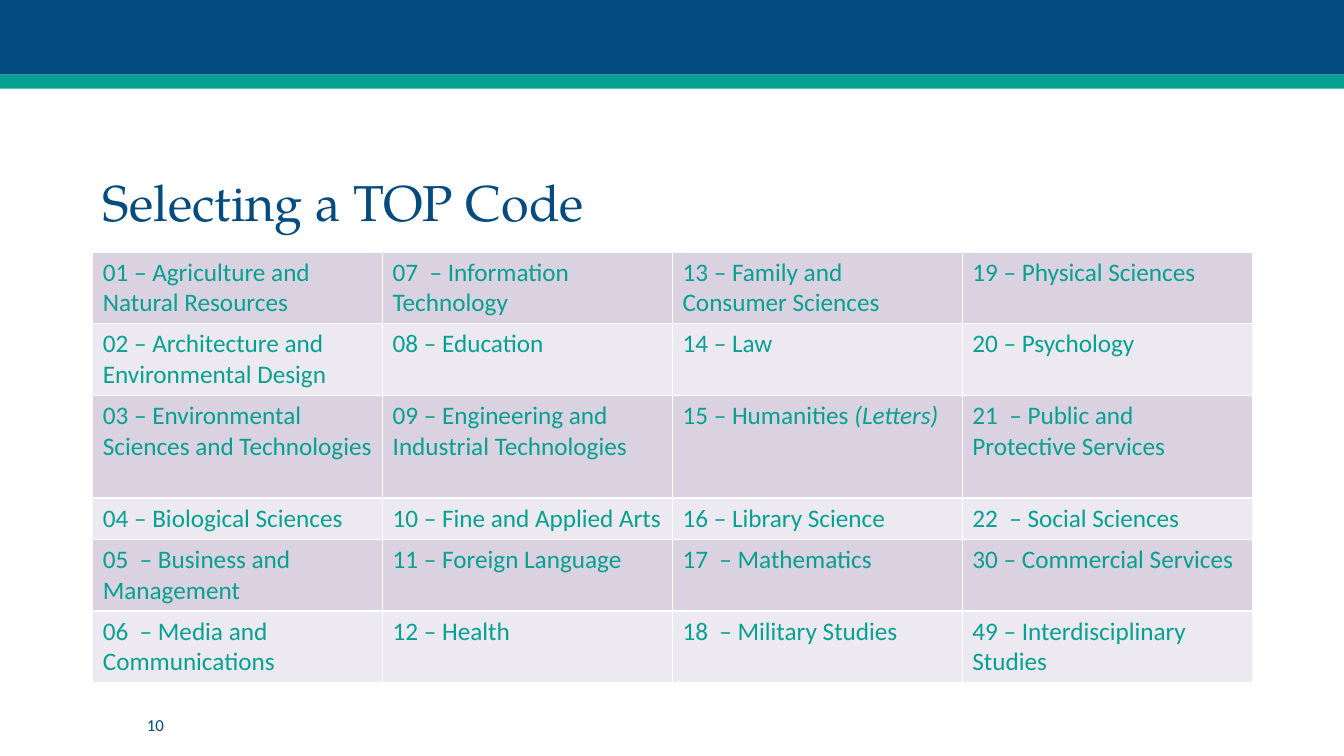
from lxml.etree import SubElement
from pptx import Presentation
from pptx.dml.color import RGBColor
from pptx.enum.shapes import MSO_SHAPE
from pptx.enum.text import MSO_ANCHOR, MSO_AUTO_SIZE, PP_ALIGN
from pptx.oxml.ns import qn
from pptx.util import Inches, Pt

NAVY, TEAL, WHITE = "044C7F", "04A193", "FFFFFF"
BANDS = ("DAD1E1", "EDE9F0")
HEAD, BODY = "TeX Gyre Pagella", "Calibri"

CODES = [
    ["01 – Agriculture and Natural Resources", "07  – Information Technology",
     "13 – Family and Consumer Sciences", "19 – Physical Sciences"],
    ["02 – Architecture and Environmental Design", "08 – Education",
     "14 – Law", "20 – Psychology"],
    ["03 – Environmental Sciences and Technologies",
     "09 – Engineering and Industrial Technologies",
     "15 – Humanities (Letters)", "21  – Public and Protective Services"],
    ["04 – Biological Sciences", "10 – Fine and Applied Arts",
     "16 – Library Science", "22  – Social Sciences"],
    ["05  – Business and Management", "11 – Foreign Language",
     "17  – Mathematics", "30 – Commercial Services"],
    ["06  – Media and Communications", "12 – Health",
     "18  – Military Studies", "49 – Interdisciplinary Studies"],
]
HEIGHTS = (0.71, 0.71, 1.02, 0.41, 0.71, 0.71)


def color(code):
    return RGBColor.from_string(code)


class Deck:
    """Holds the current slide and draws its elements in one style."""

    def __init__(self, slide):
        self.slide = slide
        self.shapes = slide.shapes

    def text(self, para, words, size, font, tint, slant=False):
        run = para.add_run()
        run.text = words
        run.font.size = Pt(size)
        run.font.name = font
        run.font.italic = slant
        run.font.color.rgb = color(tint)

    def bar(self, top, height, tint):
        bar = self.shapes.add_shape(MSO_SHAPE.RECTANGLE, 0, Inches(top),
                                    Inches(13.33), Inches(height))
        bar.shadow.inherit = False
        bar.fill.solid()
        bar.fill.fore_color.rgb = color(tint)
        bar.line.fill.background()

    def title(self, words):
        box = self.shapes.title
        box.left, box.top = Inches(0.92), Inches(1.11)
        box.width, box.height = Inches(11.5), Inches(1.25)
        frame = box.text_frame
        frame.auto_size = MSO_AUTO_SIZE.NONE
        frame.vertical_anchor = MSO_ANCHOR.BOTTOM
        para = frame.paragraphs[0]
        para.alignment = PP_ALIGN.LEFT
        para.line_spacing = 0.9
        self.text(para, words, 36, HEAD, NAVY)

    def label(self, left, top, width, height, words):
        box = self.shapes.add_textbox(Inches(left), Inches(top),
                                      Inches(width), Inches(height))
        frame = box.text_frame
        frame.word_wrap = True
        frame.vertical_anchor = MSO_ANCHOR.MIDDLE
        self.text(frame.paragraphs[0], words, 12, BODY, NAVY)

    def border(self, cell):
        """Draw a thin white line on all four sides."""
        props = cell._tc.get_or_add_tcPr()
        for side in ("lnL", "lnR", "lnT", "lnB"):
            line = SubElement(props, qn("a:" + side), w=str(Pt(1)))
            fill = SubElement(line, qn("a:solidFill"))
            SubElement(fill, qn("a:srgbClr"), val=WHITE)

    def cell(self, cell, words, tint):
        """Fill one cell; a part in brackets is set in italics."""
        self.border(cell)
        cell.fill.solid()
        cell.fill.fore_color.rgb = color(tint)
        para = cell.text_frame.paragraphs[0]
        plain, mark, rest = words.partition("(")
        self.text(para, plain, 18, BODY, TEAL)
        if mark:
            self.text(para, mark + rest, 18, BODY, TEAL, slant=True)

    def table(self, left, top, width, heights, rows):
        count = len(rows[0])
        table = self.shapes.add_table(
            len(rows), count, Inches(left), Inches(top),
            Inches(width), Inches(sum(heights))).table
        table.first_row = False
        for col in table.columns:
            col.width = Inches(width / count)
        for r, row in enumerate(rows):
            table.rows[r].height = Inches(heights[r])
            for c, words in enumerate(row):
                self.cell(table.cell(r, c), words, BANDS[r % 2])


def main():
    prs = Presentation()
    prs.slide_width, prs.slide_height = Inches(13.33), Inches(7.5)
    deck = Deck(prs.slides.add_slide(prs.slide_layouts[5]))
    deck.bar(0, 0.74, NAVY)
    deck.bar(0.74, 0.14, TEAL)
    deck.title("Selecting a TOP Code")
    deck.table(0.92, 2.5, 11.5, HEIGHTS, CODES)
    deck.label(1.36, 7.07, 0.9, 0.25, "10")
    prs.save("out.pptx")


if __name__ == "__main__":
    main()
